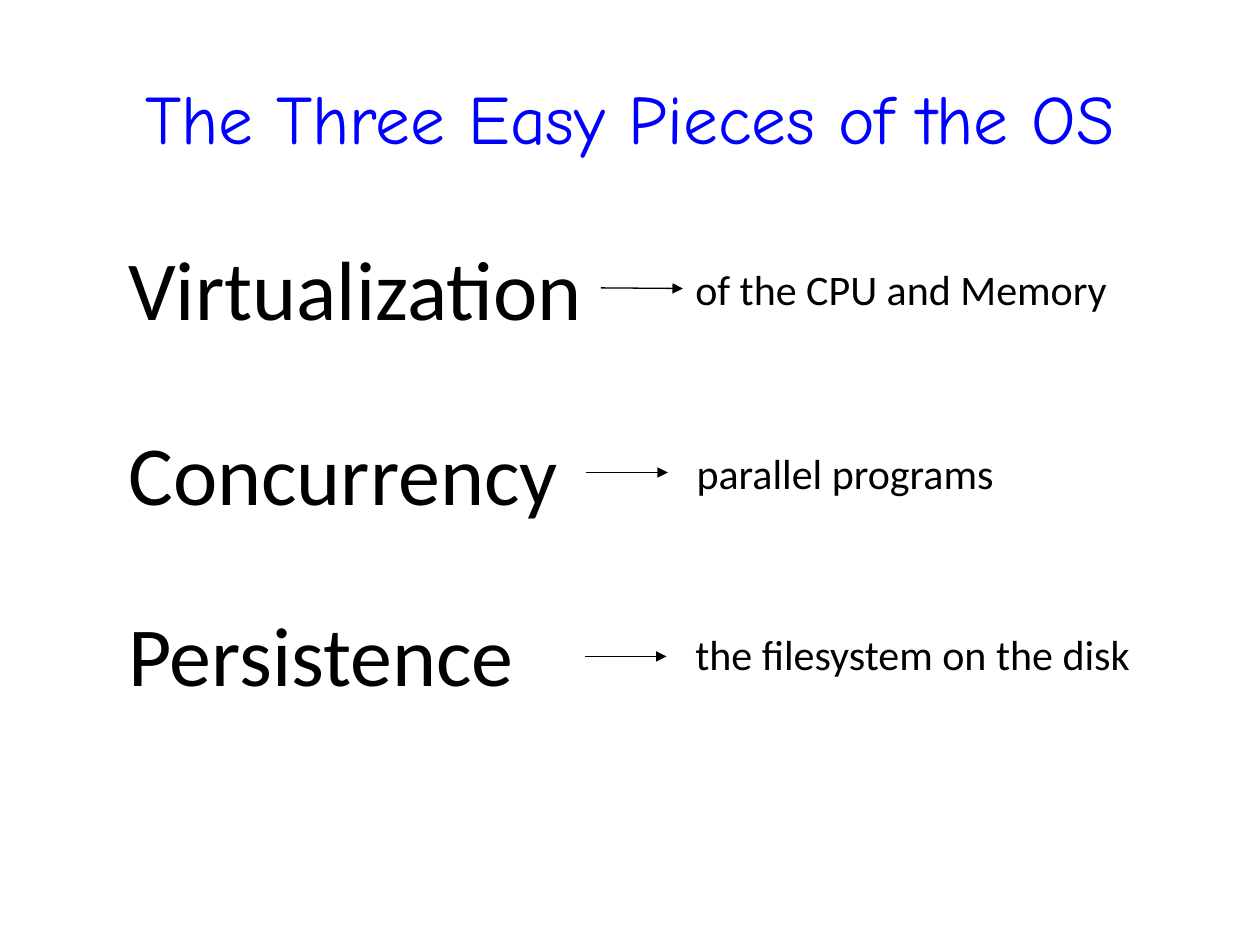
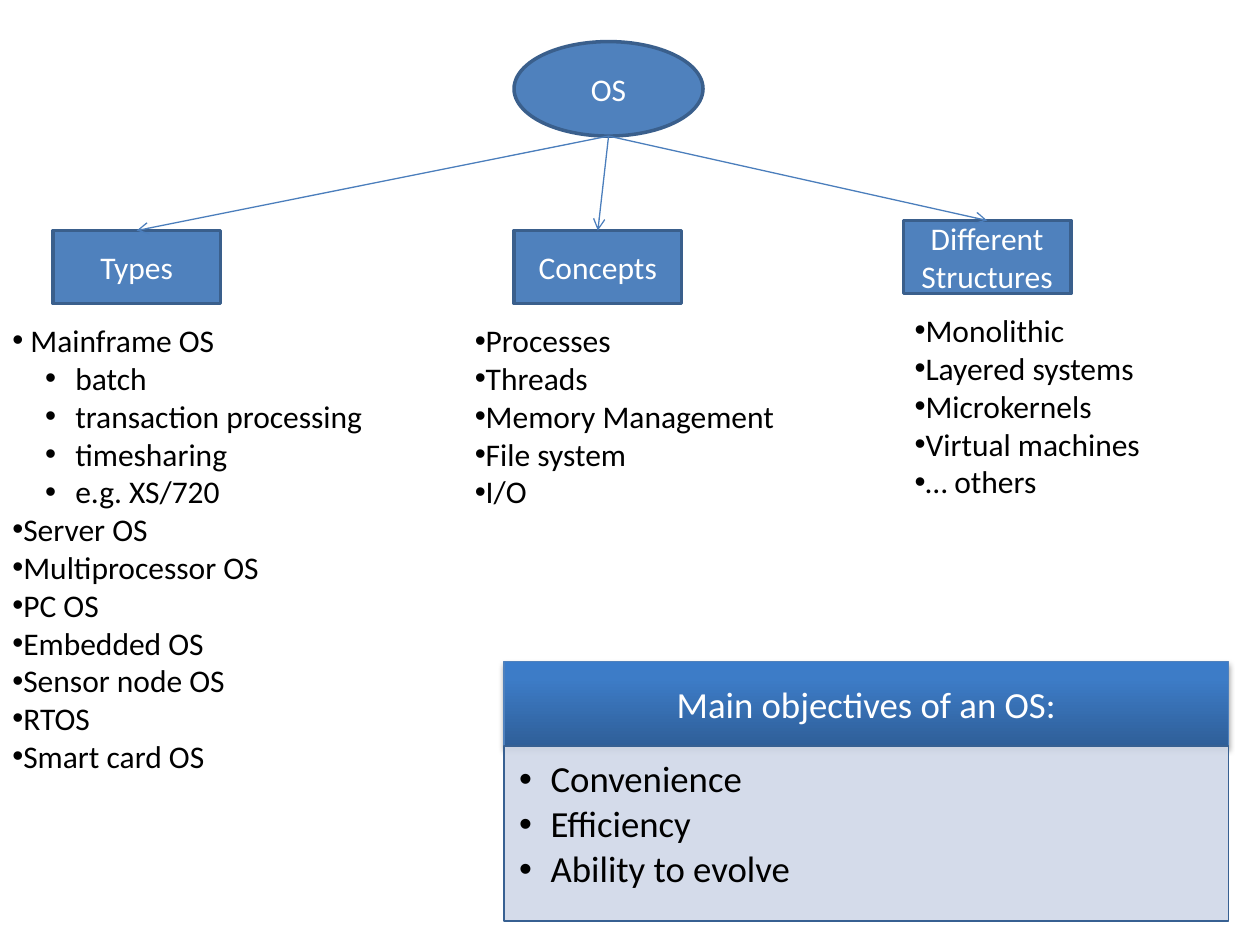
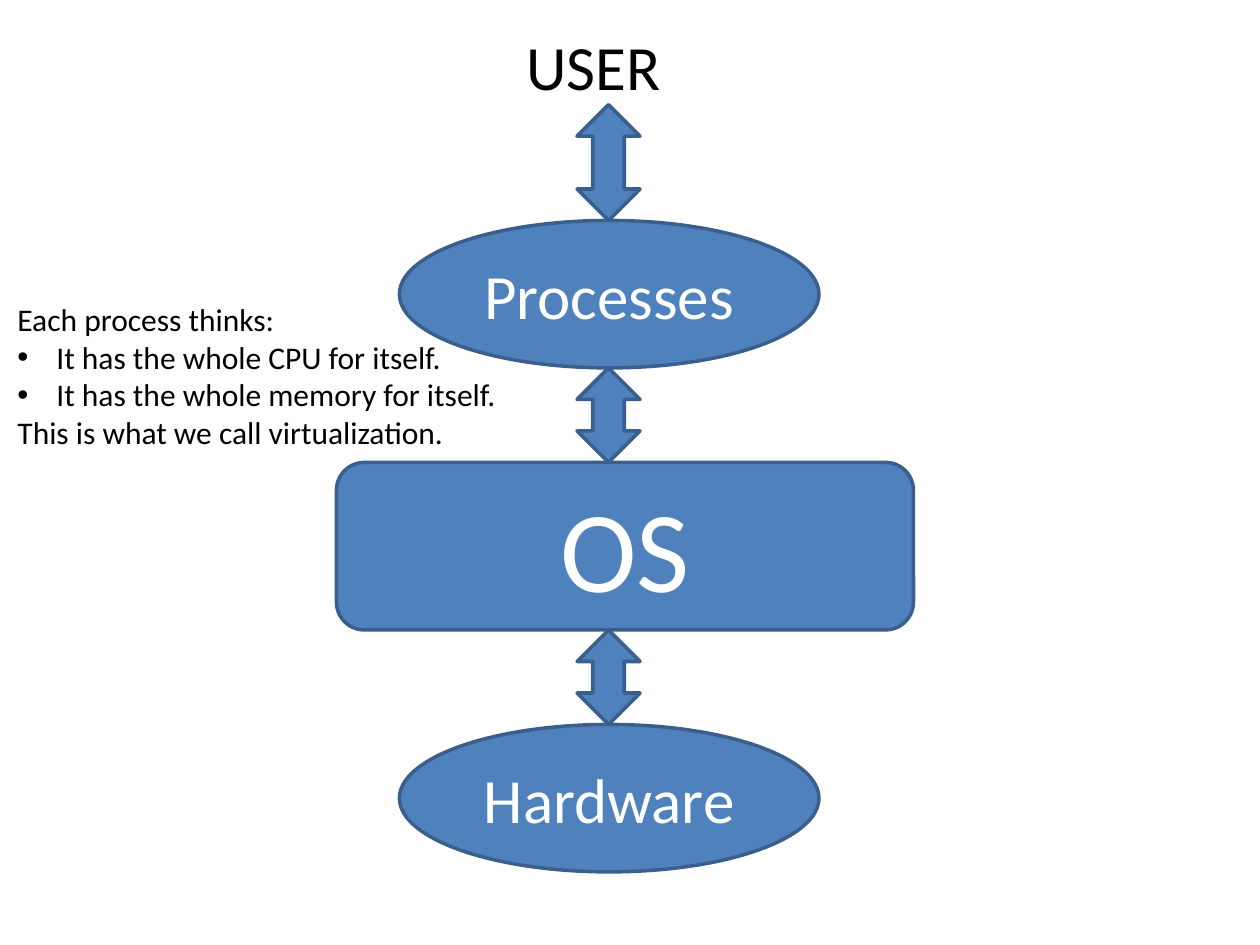
from lxml.etree import SubElement
from copy import deepcopy

from pptx import Presentation
from pptx.dml.color import RGBColor
from pptx.enum.shapes import MSO_CONNECTOR, MSO_SHAPE
from pptx.enum.text import MSO_ANCHOR, MSO_AUTO_SIZE, PP_ALIGN
from pptx.oxml.ns import qn
from pptx.util import Pt

EMU_PER_PX = 9144  # 100 px to the inch

BLACK = RGBColor(0x00, 0x00, 0x00)
WHITE = RGBColor(0xFF, 0xFF, 0xFF)
TITLE_BLUE = RGBColor(0x00, 0x00, 0xFF)
SHAPE_BLUE = RGBColor(0x4F, 0x81, 0xBD)
OUTLINE_BLUE = RGBColor(0x3A, 0x5F, 0x8C)
ARROW_BLUE = RGBColor(0x4B, 0x7E, 0xBC)
CARD_FILL = RGBColor(0xD0, 0xD8, 0xE8)
CARD_OUTLINE = RGBColor(0x37, 0x60, 0x92)
HEADER_STOPS = [
    (0.0, RGBColor(0x2F, 0x5F, 0x99)),
    (0.8, RGBColor(0x3D, 0x7C, 0xC7)),
    (1.0, RGBColor(0x3A, 0x7C, 0xCB)),
]

# Bullet styles: left margin and first-line indent in px
FLUSH = (0, 0)
NESTED = (50, -24)
HANGING = (31, -31)
CARD_BULLET = (25, -25)


def px(length):
    return int(length * EMU_PER_PX)


class Deck:
    body_font = "Calibri"
    title_font = "Comic Neue"

    def __init__(self):
        self.presentation = Presentation()
        self.presentation.slide_width = px(1000)
        self.presentation.slide_height = px(750)
        self.slide = None

    def new_slide(self):
        self.slide = self.presentation.slides.add_slide(self.presentation.slide_layouts[6])

    def set_lines(self, frame, lines, size, color, align=PP_ALIGN.LEFT, font=body_font):
        """Fill a frame with lines; a line is a string or a (string, bullet style) pair."""
        for index, line in enumerate(lines):
            text, bullet = (line, None) if isinstance(line, str) else line
            paragraph = frame.paragraphs[0] if index == 0 else frame.add_paragraph()
            paragraph.text = text
            paragraph.alignment = align
            for run in paragraph.runs:
                run.font.name = font
                run.font.size = Pt(size)
                run.font.color.rgb = color
            if bullet:
                self.add_bullet(paragraph, *bullet)

    def add_bullet(self, paragraph, margin, indent):
        properties = paragraph._p.get_or_add_pPr()
        properties.set("marL", str(px(margin)))
        properties.set("indent", str(px(indent)))
        SubElement(properties, qn("a:buFont")).set("typeface", "Arial")
        SubElement(properties, qn("a:buChar")).set("char", "•")

    def title(self, text):
        box = self.slide.shapes.add_textbox(px(50), px(30), px(900), px(125))
        box.text_frame.word_wrap = True
        box.text_frame.vertical_anchor = MSO_ANCHOR.MIDDLE
        self.set_lines(box.text_frame, [text], 39.6, TITLE_BLUE, PP_ALIGN.CENTER,
                       self.title_font)

    def label(self, left, top, width, height, lines, size=18):
        box = self.slide.shapes.add_textbox(px(left), px(top), px(width), px(height))
        box.text_frame.word_wrap = False
        box.text_frame.auto_size = MSO_AUTO_SIZE.SHAPE_TO_FIT_TEXT
        self.set_lines(box.text_frame, lines, size, BLACK)
        return box

    def block(self, kind, left, top, width, height, text="", size=18,
              outline=OUTLINE_BLUE, weight=2):
        shape = self.slide.shapes.add_shape(kind, px(left), px(top), px(width), px(height))
        shape.shadow.inherit = False
        shape.fill.solid()
        shape.fill.fore_color.rgb = SHAPE_BLUE
        shape.line.color.rgb = outline
        shape.line.width = Pt(weight)
        shape.text_frame.vertical_anchor = MSO_ANCHOR.MIDDLE
        if text:
            self.set_lines(shape.text_frame, [text], size, WHITE, PP_ALIGN.CENTER)
        return shape

    def arrow(self, start, end, color, head):
        points = [px(length) for length in (*start, *end)]
        connector = self.slide.shapes.add_connector(MSO_CONNECTOR.STRAIGHT, *points)
        connector.line.color.rgb = color
        connector.line.width = Pt(0.75)
        properties = connector._element.spPr
        SubElement(properties.find(qn("a:ln")), qn("a:tailEnd")).set("type", head)
        SubElement(properties, qn("a:effectLst"))
        return connector

    def card(self, left, top, width, header_height, body_height, heading, lines):
        """A gradient header with a shadow above a pale bulleted body."""
        header = self.block(MSO_SHAPE.RECTANGLE, left, top, width, header_height,
                            heading, 21, SHAPE_BLUE, 0.75)
        self.shade_header(header)

        body = self.block(MSO_SHAPE.RECTANGLE, left, top + header_height, width, body_height,
                          outline=CARD_OUTLINE, weight=0.75)
        body.fill.fore_color.rgb = CARD_FILL
        fill_color = body._element.spPr.find(qn("a:solidFill"))[0]
        SubElement(fill_color, qn("a:alpha")).set("val", "90000")
        frame = body.text_frame
        frame.vertical_anchor = MSO_ANCHOR.TOP
        frame.margin_left = frame.margin_top = px(12)
        frame.margin_right, frame.margin_bottom = px(16), px(18)
        self.set_lines(frame, [(line, CARD_BULLET) for line in lines], 21, BLACK)
        for paragraph in frame.paragraphs:
            paragraph.line_spacing = 0.9
            paragraph.space_after = Pt(3)

    def shade_header(self, header):
        header.fill.gradient()
        header.fill.gradient_angle = 90
        properties = header._element.spPr
        stop_list = properties.find(".//" + qn("a:gsLst"))
        stop_list.append(deepcopy(stop_list[-1]))
        for stop, (position, color) in zip(header.fill.gradient_stops, HEADER_STOPS):
            stop.position = position
            stop.color.rgb = color
        shadow = SubElement(properties.find(qn("a:effectLst")), qn("a:outerShdw"),
                            blurRad=str(Pt(3.1)), dist=str(Pt(1.8)),
                            dir="5400000", rotWithShape="0")
        shadow_color = SubElement(shadow, qn("a:srgbClr"), val="000000")
        SubElement(shadow_color, qn("a:alpha"), val="35000")


def build_three_pieces(deck):
    deck.new_slide()
    deck.title("The Three Easy Pieces of the OS")
    word_left = 92
    rows = [
        # word, top, width, meaning, left, top, width, arrow start, end, height
        ("Virtualization", 183, 385, "of the CPU and Memory", 542, 204, 350, 477, 542, 229),
        ("Concurrency", 330, 365, "parallel programs", 543, 350, 258, 465, 530, 375),
        ("Persistence", 473, 329, "the filesystem on the disk", 542, 494, 368, 464, 529, 521),
    ]
    for (word, word_top, word_width, meaning, meaning_left, meaning_top, meaning_width,
         start, end, arrow_y) in rows:
        word_box = deck.label(word_left, word_top, word_width, 91, [word], 48)
        meaning_box = deck.label(meaning_left, meaning_top, meaning_width, 50, [meaning], 24)
        connector = deck.arrow((start, arrow_y), (end, arrow_y), BLACK, "triangle")
        if start == word_left + word_width:
            connector.begin_connect(word_box, 3)
        if end == meaning_left:
            connector.end_connect(meaning_box, 1)


def build_overview(deck):
    deck.new_slide()
    deck.block(MSO_SHAPE.OVAL, 408, 33, 150, 75, "OS")
    types = [(" Mainframe OS", FLUSH)]
    types += [(text, NESTED) for text in
              ("batch", "transaction processing", "timesharing", "e.g. XS/720")]
    types += [(text, FLUSH) for text in
              ("Server OS", "Multiprocessor OS", "PC OS", "Embedded OS",
               "Sensor node OS", "RTOS", "Smart card OS")]
    concepts = [(text, FLUSH) for text in
                ("Processes", "Threads", "Memory Management", "File system", "I/O")]
    structures = [(text, FLUSH) for text in
                  ("Monolithic", "Layered systems", "Microkernels",
                   "Virtual machines", "… others")]
    box_width, box_height = 133, 58
    branches = [
        # heading, left, top, list left, list width, list height, list
        ("Types", 42, 183, 0, 310, 374, types),
        ("Concepts", 408, 183, 367, 264, 162, concepts),
        ("Different Structures", 717, 175, 716, 205, 162, structures),
    ]
    for heading, left, top, list_left, list_width, list_height, lines in branches:
        box = deck.block(MSO_SHAPE.RECTANGLE, left, top, box_width, box_height, heading)
        connector = deck.arrow((483, 108), (left + box_width / 2, top), ARROW_BLUE, "arrow")
        connector.end_connect(box, 0)
        deck.label(list_left, top + 67, list_width, list_height, lines)
    deck.card(400, 525, 575, 67, 139, "Main objectives of an OS:",
              ["Convenience", "Efficiency", "Ability to evolve"])


def build_layers(deck):
    deck.new_slide()
    deck.block(MSO_SHAPE.ROUNDED_RECTANGLE, 267, 367, 458, 133, "OS", 66)
    for text, top in (("Processes", 175), ("Hardware", 575)):
        deck.block(MSO_SHAPE.OVAL, 317, top, 333, 117, text, 36)
    for top, bottom in ((83, 175), (292, 367), (500, 575)):
        deck.block(MSO_SHAPE.UP_DOWN_ARROW, 458, top, 50, bottom - top)
    deck.label(408, 17, 128, 71, ["USER"], 36)
    deck.label(4, 233, 404, 131, [
        "Each process thinks:",
        ("It has the whole CPU for itself.", HANGING),
        ("It has the whole memory for itself.", HANGING),
        "This is what we call virtualization.",
    ])


def main():
    deck = Deck()
    build_three_pieces(deck)
    build_overview(deck)
    build_layers(deck)
    deck.presentation.save("out.pptx")


if __name__ == "__main__":
    main()
